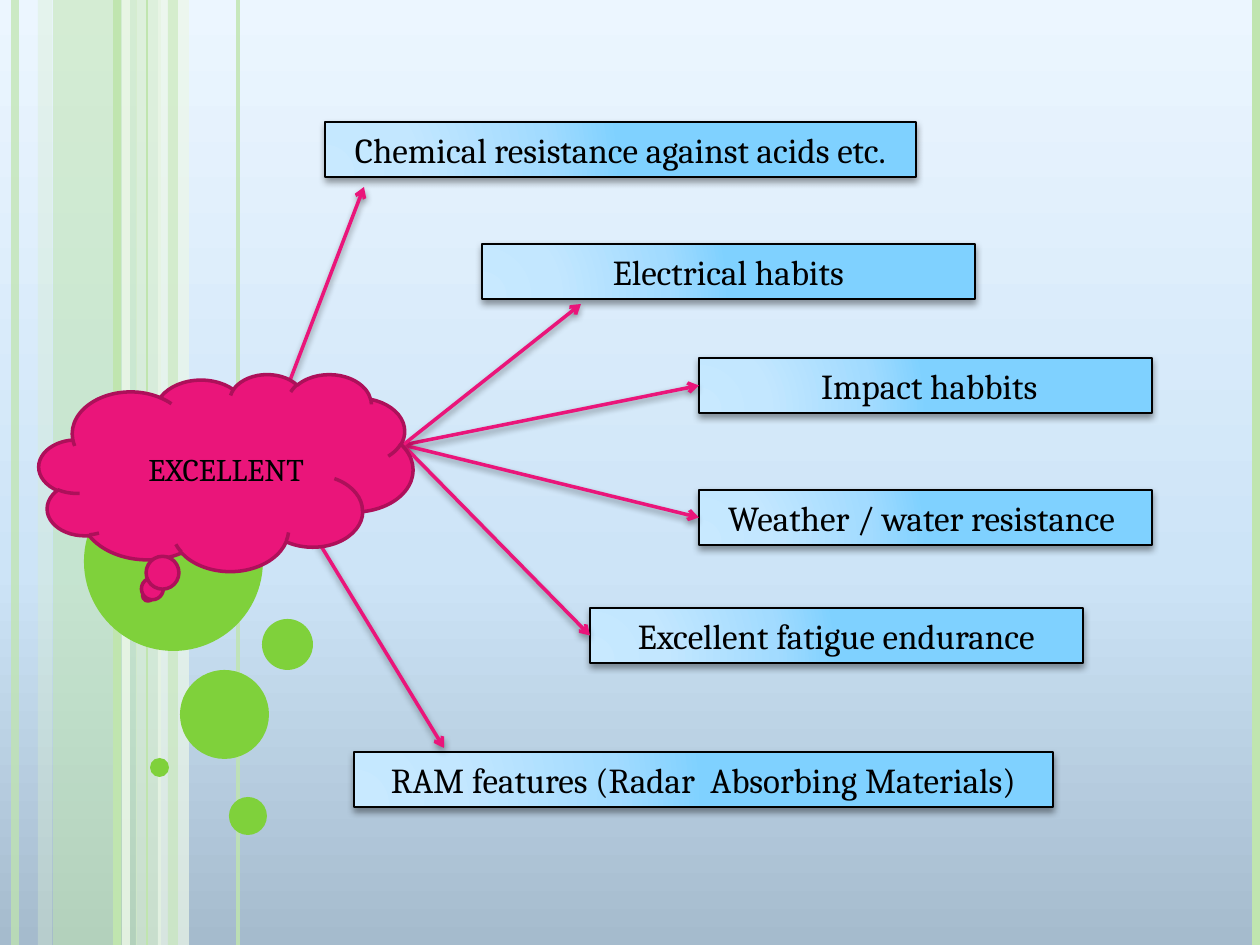
from dataclasses import dataclass

import pptx
import pptx.dml.color
import pptx.enum.dml
import pptx.enum.shapes
import pptx.enum.text
import pptx.oxml
import pptx.oxml.ns
import pptx.util

SHAPE = pptx.enum.shapes.MSO_SHAPE
qn = pptx.oxml.ns.qn
WIDTH, HEIGHT = 1260, 945
BOX_HEIGHT = 55
LEFT_SIDE = 1


@dataclass(frozen=True)
class Theme:
    font: str = "Cambria"
    feature_size: int = 20
    cloud_size: int = 18
    ink: str = "000000"
    accent: str = "EA157A"
    accent_edge: str = "AD105A"
    bubble: str = "7FD13B"
    stripe: str = "C0E5AF"
    pale_stripe: str = "D8EECE"
    faint_stripe: str = "ECF7E8"
    sky: tuple = ((0, "A5BBCD"), (40, "CDE4F7"), (100, "ECF6FF"))
    panel: tuple = ((0, "C8E9FF"), (30, "C3E7FF"), (75, "A2DBFF"), (100, "7FD1FF"))


THEME = Theme()
UPWARD = '<a:lin {ns} ang="16200000" scaled="0"/>'
RADIAL = ('<a:path {ns} path="circle">'
          '<a:fillToRect l="5000" t="100000" r="120000" b="10000"/></a:path>')


def px(length):
    return pptx.util.Emu(round(length * 914400 / 126))


def rgb(value):
    return pptx.dml.color.RGBColor.from_string(value)


def add_xml(parent, markup):
    element = pptx.oxml.parse_xml(markup.format(ns=pptx.oxml.ns.nsdecls("a")))
    parent.append(element)
    return element


def paint_gradient(owner, fill, stops, direction):
    fill.gradient()
    gradient = next(owner.iter(qn("a:gradFill")))
    for child in list(gradient):
        gradient.remove(child)
    stop_list = add_xml(gradient, "<a:gsLst {ns}/>")
    for position, color in stops:
        add_xml(stop_list, f'<a:gs {{ns}} pos="{position * 1000}">'
                           f'<a:srgbClr val="{color}"/></a:gs>')
    add_xml(gradient, direction)


def paint_solid(owner, fill, color, opacity=100):
    fill.solid()
    fill.fore_color.rgb = rgb(color)
    if opacity < 100:
        add_xml(next(owner.iter(qn("a:srgbClr"))),
                f'<a:alpha {{ns}} val="{opacity * 1000}"/>')


def add_shadow(effects):
    add_xml(effects, '<a:outerShdw {ns} blurRad="50800" dist="25400" dir="5400000" '
                     'rotWithShape="0"><a:srgbClr val="000000">'
                     '<a:alpha val="40000"/></a:srgbClr></a:outerShdw>')


def add_figure(slide, kind, left, top, width, height):
    figure = slide.shapes.add_shape(kind, px(left), px(top), px(width), px(height))
    figure.shadow.inherit = False
    figure.line.fill.background()
    return figure


def add_solid(slide, kind, left, top, width, height, color, opacity=100):
    figure = add_figure(slide, kind, left, top, width, height)
    paint_solid(figure._element.spPr, figure.fill, color, opacity)
    return figure


def outline(figure, color, width):
    figure.line.color.rgb = rgb(color)
    figure.line.width = pptx.util.Pt(width)


def add_line(slide, start, end, color, width, opacity=100):
    line = slide.shapes.add_connector(
        pptx.enum.shapes.MSO_CONNECTOR.STRAIGHT, *map(px, (*start, *end)))
    line.line.width = pptx.util.Pt(width)
    paint_solid(line._element.spPr, line.line.fill, color, opacity)
    effects = add_xml(line._element.spPr, "<a:effectLst {ns}/>")
    return line, effects


def add_arrow(slide, start, end, target=None):
    arrow, effects = add_line(slide, start, end, THEME.accent, 2)
    add_xml(arrow.line._get_or_add_ln(), '<a:tailEnd {ns} type="arrow"/>')
    add_shadow(effects)
    if target is not None:
        arrow.end_connect(target, LEFT_SIDE)


def write_label(holder, label, size):
    frame = holder.text_frame
    frame.word_wrap = True
    frame.auto_size = pptx.enum.text.MSO_AUTO_SIZE.SHAPE_TO_FIT_TEXT
    frame.vertical_anchor = pptx.enum.text.MSO_ANCHOR.TOP
    paragraph = frame.paragraphs[0]
    paragraph.text = label
    paragraph.alignment = pptx.enum.text.PP_ALIGN.CENTER
    paragraph.font.name = THEME.font
    paragraph.font.size = pptx.util.Pt(size)
    paragraph.font.color.rgb = rgb(THEME.ink)


def add_feature(slide, label, left, top, width):
    box = add_figure(slide, SHAPE.RECTANGLE, left, top, width, BOX_HEIGHT)
    paint_gradient(box._element.spPr, box.fill, THEME.panel, RADIAL)
    outline(box, THEME.ink, 1)
    add_shadow(box._element.spPr.find(qn("a:effectLst")))
    write_label(box, label, THEME.feature_size)
    return box


def add_backdrop(slide):
    paint_gradient(slide._element, slide.background.fill, THEME.sky, UPWARD)
    for left, width, color, opacity in (
            (53, 84, THEME.stripe, 54), (38, 14, THEME.pale_stripe, 36),
            (136, 25, THEME.pale_stripe, 70), (158, 31, THEME.faint_stripe, 71)):
        add_solid(slide, SHAPE.RECTANGLE, left, 0, width, HEIGHT, color, opacity)
    for x, color, width, opacity in (
            (15, THEME.stripe, 4.5, 73), (126, THEME.faint_stripe, 4.5, 83),
            (117, THEME.stripe, 4.5, 100), (238, THEME.stripe, 2.25, 82),
            (147, THEME.stripe, 0.75, 100), (1256, THEME.stripe, 4.5, 100)):
        add_line(slide, (x, 0), (x, HEIGHT), color, width, opacity)
    add_solid(slide, SHAPE.RECTANGLE, 168, 0, 10, HEIGHT, THEME.stripe, 51)
    for left, top, diameter in ((84, 472, 179), (180, 670, 89), (150, 758, 19),
                                (229, 797, 38), (262, 619, 51)):
        add_solid(slide, SHAPE.OVAL, left, top, diameter, diameter, THEME.bubble)


def add_cloud(slide):
    cloud = add_solid(slide, SHAPE.CLOUD_CALLOUT, 39, 374, 374, 197, THEME.accent)
    outline(cloud, THEME.accent_edge, 2)
    caption = slide.shapes.add_textbox(px(98), px(444), px(256), px(51))
    write_label(caption, "EXCELLENT", THEME.cloud_size)


def main():
    deck = pptx.Presentation()
    deck.slide_width, deck.slide_height = px(WIDTH), px(HEIGHT)
    slide = deck.slides.add_slide(deck.slide_layouts[6])
    add_backdrop(slide)

    add_feature(slide, "Chemical resistance against acids etc.", 325, 122, 591)
    weather = add_feature(slide, "Weather / water resistance ", 699, 490, 453)
    add_feature(slide, "RAM features (Radar  Absorbing Materials)", 354, 752, 699)
    add_feature(slide, "Electrical habits", 482, 244, 493)
    fatigue = add_feature(slide, "Excellent fatigue endurance", 590, 608, 493)
    impact = add_feature(slide, " Impact habbits", 699, 358, 453)

    hub = (403, 445)
    add_arrow(slide, (276, 417), (364, 187))
    for feature, end in ((impact, (699, 386)), (weather, (699, 518)),
                         (fatigue, (590, 636))):
        add_arrow(slide, hub, end, feature)
    add_arrow(slide, (276, 472), (444, 748))
    add_arrow(slide, hub, (581, 304))
    add_cloud(slide)
    deck.save("out.pptx")


if __name__ == "__main__":
    main()
